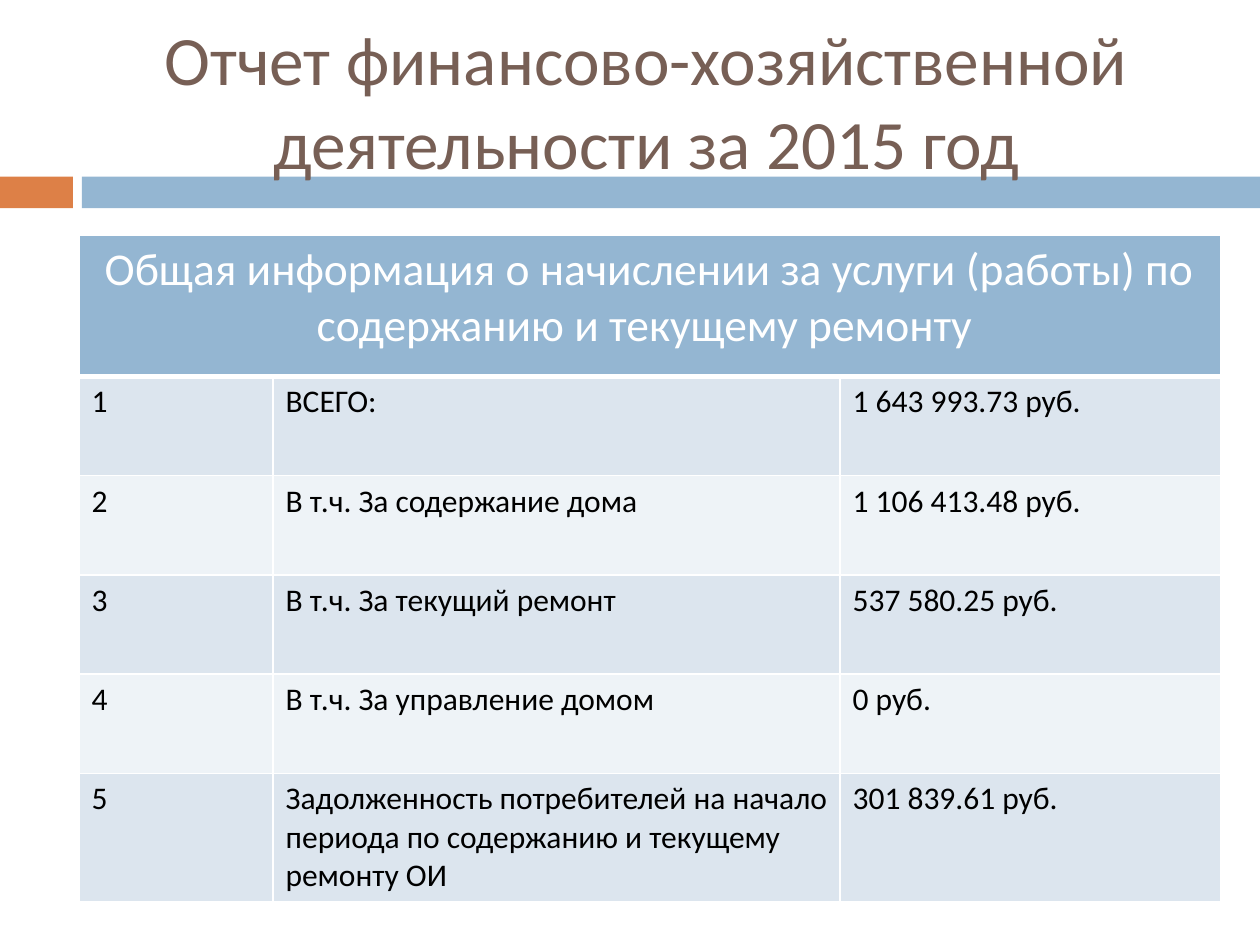
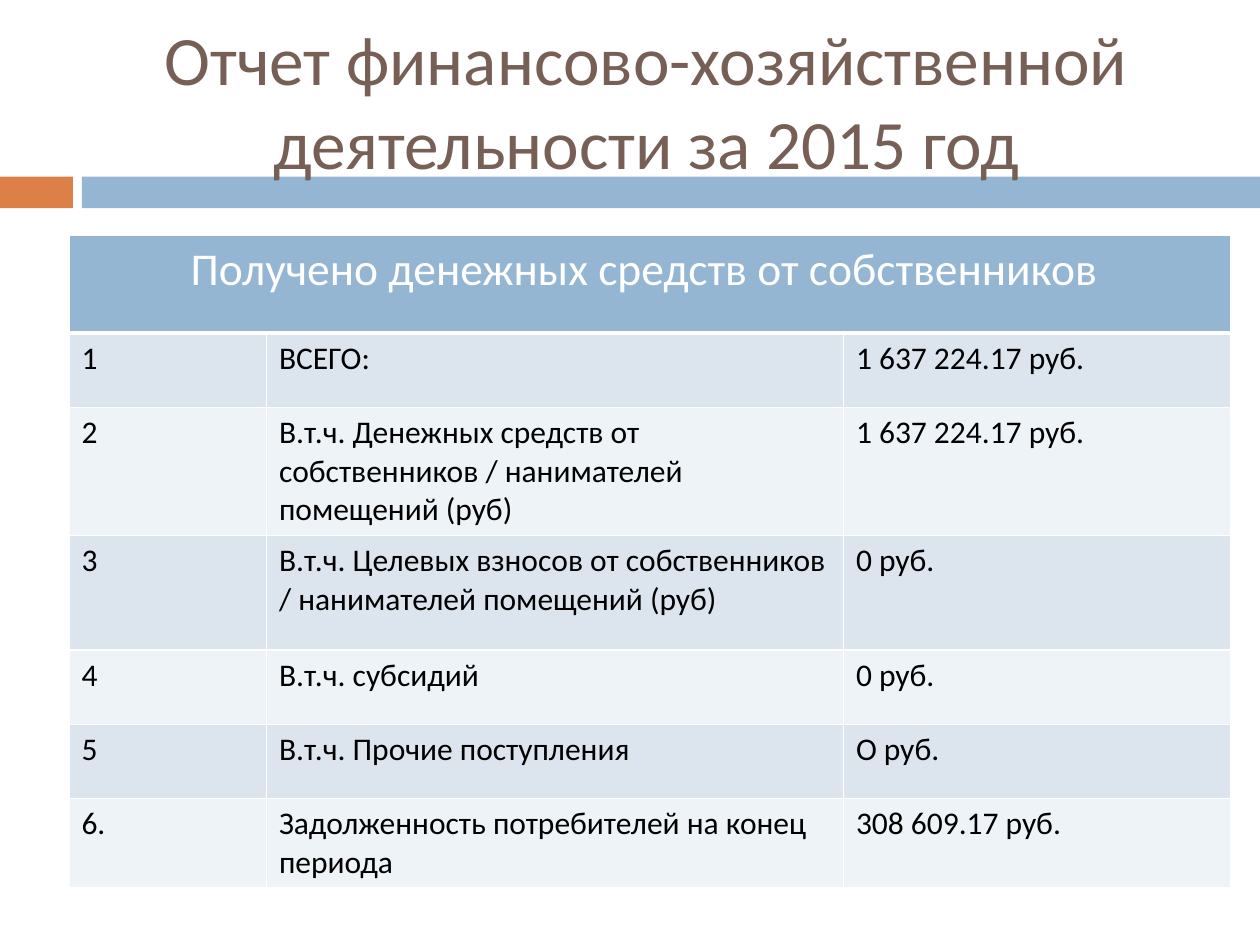
from lxml.etree import SubElement
from pptx import Presentation
from pptx.dml.color import RGBColor
from pptx.enum.shapes import MSO_SHAPE
from pptx.enum.text import MSO_ANCHOR as Anchor, MSO_AUTO_SIZE as AutoSize, PP_ALIGN as Align
from pptx.oxml.ns import qn
from pptx.util import Cm, Pt

COLORS = {
    "accent": "DD8047",
    "band": "94B6D2",
    "title": "775F55",
    "text": "000000",
    "white": "FFFFFF",
    "odd_row": "DCE5EE",
    "even_row": "EEF3F7",
}
FONT = "Calibri"
SLIDE_WIDTH, SLIDE_HEIGHT = 25.4, 19.05
TITLE = "Отчет финансово-хозяйственной деятельности за 2015 год"
TITLE_BOX = (1.7, 0.64, 22.66, 2.74)
BAND_BOX = (0, 3.56, SLIDE_WIDTH, 0.64)
ACCENT_WIDTH, BAND_GAP = 1.47, 0.18
TABLE_CENTER, TABLE_TOP = 13.1, 4.75
COLUMN_WEIGHTS = (0.51, 1.49, 1)

TITLE_FORMAT = {"size": Pt(39.6), "color": "title", "align": Align.CENTER}
HEADING_FORMAT = {"size": Pt(26), "color": "white", "align": Align.CENTER}
CELL_FORMAT = {"size": Pt(18), "color": "text", "align": Align.LEFT}

REPORTS = [
    {
        "heading": "Общая информация о начислении за услуги (работы) по содержанию и текущему ремонту ",
        "width": 23.01,
        "heights": (2.84, 2, 2, 2, 2, 2.03),
        "rows": [
            ("1", "ВСЕГО:", "1 643 993.73 руб."),
            ("2", "В т.ч. За содержание дома", "1 106 413.48 руб."),
            ("3", "В т.ч. За текущий ремонт", "537 580.25 руб."),
            ("4", "В т.ч. За управление домом", "0 руб."),
            ("5", "Задолженность потребителей на начало периода по содержанию и текущему ремонту ОИ",
             "301 839.61 руб."),
        ],
    },
    {
        "heading": "Получено денежных средств от собственников ",
        "width": 23.42,
        "heights": (1.96, 1.5, 2.31, 2.31, 1.5, 1.5, 1.63),
        "rows": [
            ("1", "ВСЕГО:", "1 637 224.17 руб."),
            ("2", "В.т.ч. Денежных средств от собственников / нанимателей помещений (руб)",
             "1 637 224.17 руб."),
            ("3", "В.т.ч. Целевых взносов от собственников / нанимателей помещений (руб)", "0 руб."),
            ("4", "В.т.ч. субсидий", "0 руб."),
            ("5", "В.т.ч. Прочие поступления", "О руб."),
            ("6.", "Задолженность потребителей на конец периода", "308 609.17 руб."),
        ],
    },
]


def rgb(name):
    return RGBColor.from_string(COLORS[name])


def write_text(frame, text, style):
    frame.text = text
    paragraph = frame.paragraphs[0]
    paragraph.alignment = style["align"]
    font = paragraph.runs[0].font
    for name, value in {"name": FONT, "size": style["size"], "bold": False}.items():
        setattr(font, name, value)
    font.color.rgb = rgb(style["color"])


def add_band(slide, box):
    """Draw the accent block and the long band behind the title."""
    left, top, width, height = box
    band_left = left + ACCENT_WIDTH + BAND_GAP
    parts = [
        (left, ACCENT_WIDTH, "accent"),
        (band_left, left + width - band_left, "band"),
    ]
    for part_left, part_width, color in parts:
        shape = slide.shapes.add_shape(
            MSO_SHAPE.RECTANGLE, Cm(part_left), Cm(top), Cm(part_width), Cm(height))
        shape.shadow.inherit = False
        shape.fill.solid()
        shape.fill.fore_color.rgb = rgb(color)
        shape.line.fill.background()
        slide.shapes.element.insert(2, shape.element)


def format_title(slide, box):
    title = slide.shapes.title
    for name, value in zip(("left", "top", "width", "height"), box):
        setattr(title, name, Cm(value))
    frame = title.text_frame
    write_text(frame, TITLE, TITLE_FORMAT)
    settings = {"word_wrap": True, "auto_size": AutoSize.NONE, "vertical_anchor": Anchor.MIDDLE}
    for name, value in settings.items():
        setattr(frame, name, value)


def set_borders(cell, bottom_width):
    properties = cell._tc.get_or_add_tcPr()
    for side, width in {"L": 1, "R": 1, "T": 1, "B": bottom_width}.items():
        line = SubElement(properties, qn(f"a:ln{side}"), w=str(Pt(width)))
        fill = SubElement(line, qn("a:solidFill"))
        SubElement(fill, qn("a:srgbClr"), val=COLORS["white"])


def format_cell(cell, fill, bottom_width=1):
    set_borders(cell, bottom_width)
    cell.fill.solid()
    cell.fill.fore_color.rgb = rgb(fill)


def add_report_table(slide, report, box):
    left, top, width, height = box
    rows = report["rows"]
    table = slide.shapes.add_table(
        len(rows) + 1, len(COLUMN_WEIGHTS), Cm(left), Cm(top), Cm(width), Cm(height)).table
    for column, weight in zip(table.columns, COLUMN_WEIGHTS):
        column.width = Cm(width * weight / sum(COLUMN_WEIGHTS))
    for row, row_height in zip(table.rows, report["heights"]):
        row.height = Cm(row_height)

    heading = table.cell(0, 0)
    heading.merge(table.cell(0, len(COLUMN_WEIGHTS) - 1))
    write_text(heading.text_frame, report["heading"], HEADING_FORMAT)
    for cell in table.rows[0].cells:
        format_cell(cell, "band", bottom_width=3)

    for row_index, values in enumerate(rows, start=1):
        fill = "odd_row" if row_index % 2 else "even_row"
        for column_index, value in enumerate(values):
            cell = table.cell(row_index, column_index)
            write_text(cell.text_frame, value, CELL_FORMAT)
            format_cell(cell, fill)


def add_report_slide(presentation, report):
    slide = presentation.slides.add_slide(presentation.slide_layouts.get_by_name("Title Only"))
    add_band(slide, BAND_BOX)
    format_title(slide, TITLE_BOX)
    width = report["width"]
    table_box = (TABLE_CENTER - width / 2, TABLE_TOP, width, sum(report["heights"]))
    add_report_table(slide, report, table_box)


def main():
    presentation = Presentation()
    presentation.slide_width = Cm(SLIDE_WIDTH)
    presentation.slide_height = Cm(SLIDE_HEIGHT)
    for report in REPORTS:
        add_report_slide(presentation, report)
    presentation.save("out.pptx")


if __name__ == "__main__":
    main()
